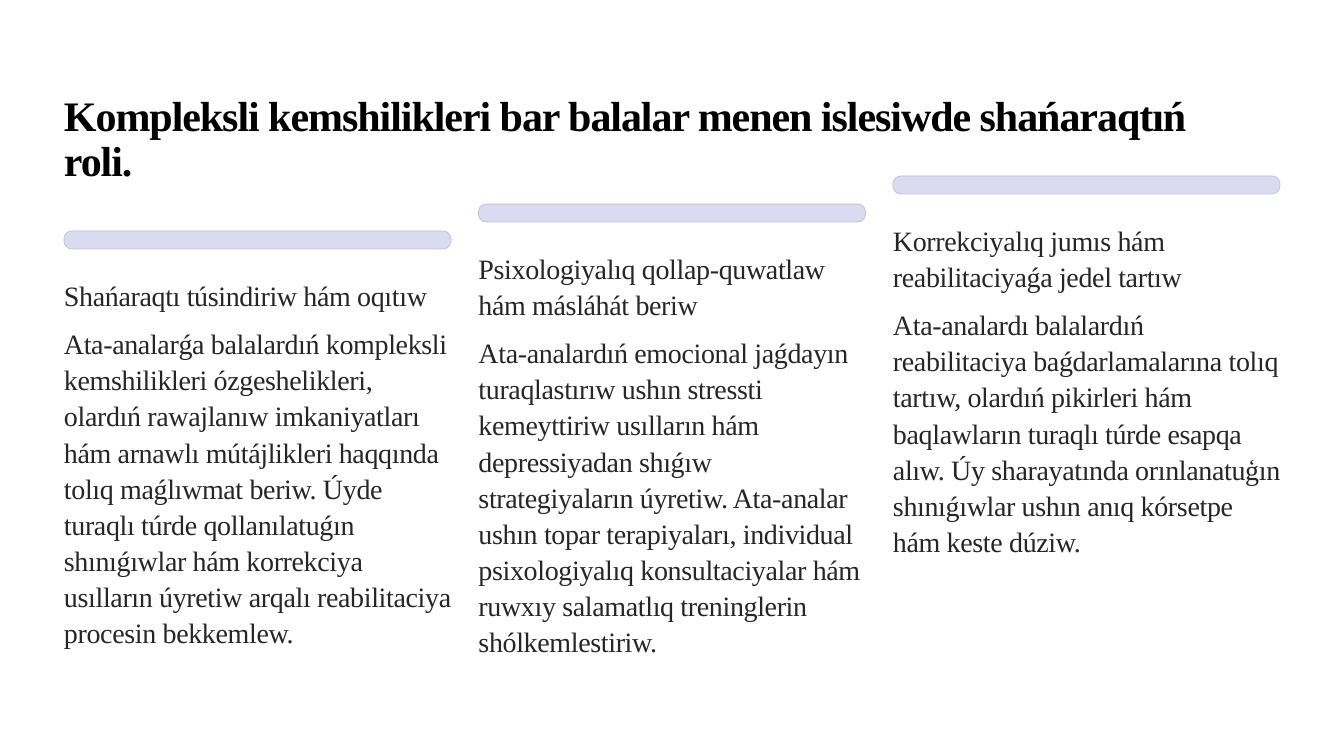
import dataclasses

import pptx
import pptx.dml.color
import pptx.enum.shapes
import pptx.enum.text
import pptx.util

PX = 914400 / 84


@dataclasses.dataclass(frozen=True)
class Theme:
    """Hold the colours, font and type sizes of the slide."""
    font: str = "Times New Roman"
    title: str = "000000"
    text: str = "272525"
    bar: str = "DADBF1"
    edge: str = "C0C1D7"
    big: int = 36
    small: int = 24
    lead_big: int = 39
    lead_small: int = 31


THEME = Theme()

TITLE = "Kompleksli kemshilikleri bar balalar menen islesiwde shańaraqtıń roli."

COLUMNS = [
    (231, 1, 292, "Shańaraqtı túsindiriw hám oqıtıw",
     "Ata-analarǵa balalardıń kompleksli kemshilikleri ózgeshelikleri, "
     "olardıń rawajlanıw imkaniyatları hám arnawlı mútájlikleri haqqında "
     "tolıq maǵlıwmat beriw. Úyde turaqlı túrde qollanılatuǵın "
     "shınıǵıwlar hám korrekciya usılların úyretiw arqalı reabilitaciya "
     "procesin bekkemlew."),
    (204, 2, 328, "Psixologiyalıq qollap-quwatlaw hám másláhát beriw",
     "Ata-analardıń emocional jaǵdayın turaqlastırıw ushın stressti "
     "kemeyttiriw usılların hám depressiyadan shıǵıw strategiyaların "
     "úyretiw. Ata-analar ushın topar terapiyaları, individual "
     "psixologiyalıq konsultaciyalar hám ruwxıy salamatlıq treninglerin "
     "shólkemlestiriw."),
    (176, 2, 219, "Korrekciyalıq jumıs hám reabilitaciyaǵa jedel tartıw",
     "Ata-analardı balalardıń reabilitaciya baǵdarlamalarına tolıq "
     "tartıw, olardıń pikirleri hám baqlawların turaqlı túrde esapqa "
     "alıw. Úy sharayatında orınlanatuģın shınıǵıwlar ushın anıq "
     "kórsetpe hám keste dúziw."),
]


def px(count):
    """Turn whole px into EMU."""
    return pptx.util.Emu(round(count * PX))


def tint(code):
    """Turn a hex code into a colour."""
    return pptx.dml.color.RGBColor.from_string(code)


def write(shape, words, size, lead, color, track, bold=False, wrap=True):
    """Put one left-aligned paragraph at the top of a shape."""
    frame = shape.text_frame
    frame.text = words
    frame.word_wrap = wrap
    frame.auto_size = pptx.enum.text.MSO_AUTO_SIZE.NONE
    frame.vertical_anchor = pptx.enum.text.MSO_ANCHOR.TOP
    frame.margin_left = frame.margin_right = 0
    frame.margin_top = frame.margin_bottom = 0
    para = frame.paragraphs[0]
    para.alignment = pptx.enum.text.PP_ALIGN.LEFT
    para.line_spacing = pptx.util.Pt(lead)
    para.space_before = pptx.util.Pt(0)
    font = para.runs[0].font
    font.name = THEME.font
    font.size = pptx.util.Pt(size)
    font.bold = bold
    font.color.rgb = tint(color)
    para.runs[0]._r.get_or_add_rPr().set("spc", str(track))


def add_title(slide, left, top, width, height):
    """Move and format the title placeholder."""
    title = slide.shapes.title
    title.left, title.top = px(left), px(top)
    title.width, title.height = px(width), px(height)
    write(title, TITLE, THEME.big, THEME.lead_big, THEME.title, -90,
          bold=True, wrap=False)


def add_bar(slide, left, top, width, height):
    """Draw the rounded bar that heads a column."""
    bar = slide.shapes.add_shape(
        pptx.enum.shapes.MSO_SHAPE.ROUNDED_RECTANGLE,
        px(left), px(top), px(width), px(height))
    bar.adjustments[0] = 0.42
    bar.shadow.inherit = False
    bar.fill.solid()
    bar.fill.fore_color.rgb = tint(THEME.bar)
    bar.line.color.rgb = tint(THEME.edge)
    bar.line.width = pptx.util.Pt(0.6)


def add_text(slide, left, top, width, height, words):
    """Add a text box in the column style."""
    box = slide.shapes.add_textbox(px(left), px(top), px(width), px(height))
    write(box, words, THEME.small, THEME.lead_small, THEME.text, -30)


def add_column(slide, left, top, width, lines, depth, head, body):
    """Stack a bar, a heading and a body text."""
    tall = 36 * lines
    add_bar(slide, left, top, width, 18)
    add_text(slide, left, top + 45, width, tall, head)
    add_text(slide, left, top + 57 + tall, width, depth, body)


def main():
    """Build the slide and save it."""
    deck = pptx.Presentation()
    deck.slide_width, deck.slide_height = px(1344), px(756)
    slide = deck.slides.add_slide(deck.slide_layouts[5])
    left, width, right = 64, 387, 1280
    step = (right - width - left) / (len(COLUMNS) - 1)
    add_title(slide, left, 94, 1158, 45)
    for index, (top, lines, depth, head, body) in enumerate(COLUMNS):
        add_column(slide, left + index * step, top, width, lines, depth,
                   head, body)
    deck.save("out.pptx")


if __name__ == "__main__":
    main()
